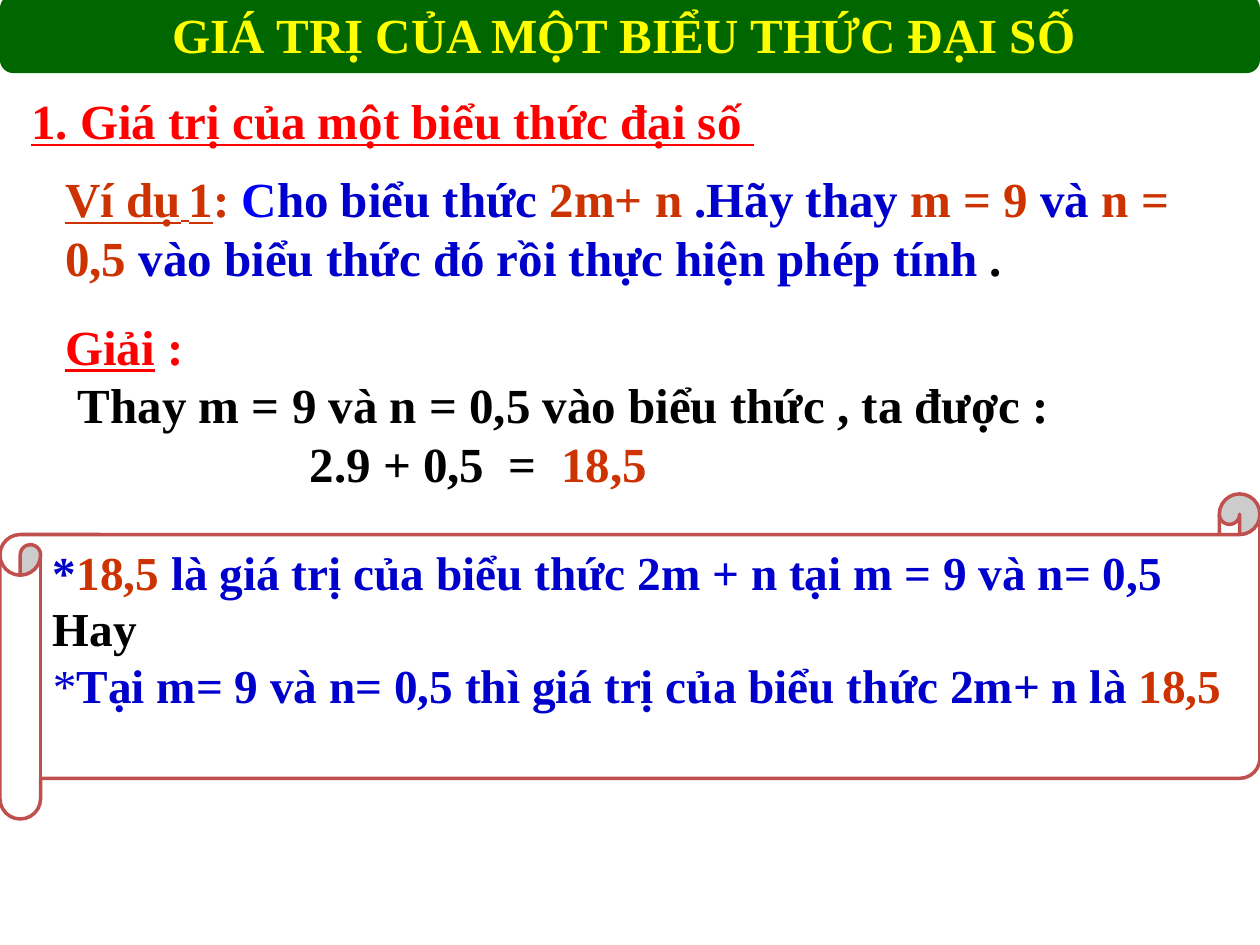
import dataclasses

import pptx
import pptx.dml.color
import pptx.enum.shapes
import pptx.enum.text
import pptx.util

WIDTH, HEIGHT = 10, 7.5
MIDDLE = pptx.enum.text.MSO_ANCHOR.MIDDLE
TOP = pptx.enum.text.MSO_ANCHOR.TOP
CENTER = pptx.enum.text.PP_ALIGN.CENTER
SHAPES = pptx.enum.shapes.MSO_SHAPE


@dataclasses.dataclass(frozen=True)
class Theme:
    font: str = "Times New Roman"
    body_size: int = 28
    note_size: int = 27
    small_size: int = 18
    banner: str = "006600"
    yellow: str = "FFFF00"
    red: str = "FF0000"
    value: str = "CC3300"
    blue: str = "0000CC"
    bright_blue: str = "0000FF"
    black: str = "000000"
    paper: str = "FFFFFF"
    scroll_line: str = "C0504D"


THEME = Theme()


def color(code):
    return pptx.dml.color.RGBColor.from_string(code)


def place(left, top, width, height):
    """Turn shares of the slide's size into lengths."""
    return [pptx.util.Inches(round(share * side, 2)) for share, side in
            zip((left, top, width, height), (WIDTH, HEIGHT) * 2)]


def add_run(paragraph, text, ink, size=THEME.body_size, bold=True, underline=False):
    run = paragraph.add_run()
    run.text = text
    run.font.name = THEME.font
    run.font.size = pptx.util.Pt(size)
    run.font.bold = bold
    run.font.underline = underline
    run.font.color.rgb = color(ink)


def write(shape, lines, size=THEME.body_size, align=None, anchor=TOP, wrap=True, indents=()):
    """Fill a shape; each line is a list of (text, colour, extra format)."""
    frame = shape.text_frame
    frame.word_wrap = wrap
    frame.vertical_anchor = anchor
    for index, line in enumerate(lines):
        paragraph = frame.add_paragraph() if index else frame.paragraphs[0]
        paragraph.alignment = align or pptx.enum.text.PP_ALIGN.LEFT
        if index < len(indents):
            properties = paragraph._p.get_or_add_pPr()
            properties.set("marL", str(pptx.util.Inches(indents[index])))
        for text, ink, *extra in line:
            add_run(paragraph, text, ink, **{"size": size, **(extra[0] if extra else {})})


def add_text(slide, box, lines, **layout):
    write(slide.shapes.add_textbox(*place(*box)), lines, **layout)


def add_panel(slide, kind, box, adjustment, fill, line=None):
    shape = slide.shapes.add_shape(kind, *place(*box))
    shape.shadow.inherit = False
    shape.adjustments[0] = adjustment
    shape.fill.solid()
    shape.fill.fore_color.rgb = color(fill)
    if line:
        shape.line.color.rgb = color(line)
        shape.line.width = pptx.util.Pt(2)
    else:
        shape.line.fill.background()
    return shape


def main():
    presentation = pptx.Presentation()
    presentation.slide_width = pptx.util.Inches(WIDTH)
    presentation.slide_height = pptx.util.Inches(HEIGHT)
    slide = presentation.slides.add_slide(presentation.slide_layouts[6])
    underlined = {"underline": True}
    value, blue, black = THEME.value, THEME.blue, THEME.black

    # Section heading
    add_text(slide, (0.015, 0.09, 0.858, 0.09),
             [[("1. Giá trị của một biểu thức đại số ", THEME.red, underlined)]])

    # Title banner
    banner = add_panel(slide, SHAPES.ROUNDED_RECTANGLE, (0, -0.005, 1, 0.083),
                       0.17, THEME.banner)
    write(banner, [[("GIÁ TRỊ CỦA MỘT BIỂU THỨC ĐẠI SỐ ", THEME.yellow)]],
          align=CENTER, anchor=MIDDLE)

    # Solution
    add_text(slide, (0.042, 0.328, 0.867, 0.201), [
        [("Giải", THEME.red, underlined), (" :", THEME.red)],
        [("Thay m = 9 và n = 0,5 vào biểu thức , ta được :", black)],
        [("2.9 + 0,5  =  ", black), ("18,5", value)],
    ], indents=(0, 0.1, 1.94))

    # Example
    add_text(slide, (0.042, 0.172, 0.95, 0.139), [[
        ("Ví dụ", value, underlined),
        (" ", value, {"underline": True, "size": THEME.small_size}),
        ("1", value, underlined), (": ", value),
        ("C", THEME.bright_blue), ("ho biểu thức ", blue), ("2m+ n", value),
        (" .Hãy thay ", blue), ("m = 9", value), (" và ", blue), ("n = 0,5", value),
        (" vào biểu thức đó rồi thực hiện phép tính", blue), (" .", black),
    ]])

    # Conclusion scroll, with one line's room left below the text
    scroll = add_panel(slide, SHAPES.HORIZONTAL_SCROLL, (0, 0.523, 1, 0.344),
                       0.125, THEME.paper, THEME.scroll_line)
    scroll.text_frame.margin_bottom = pptx.util.Inches(0.5)
    write(scroll, [
        [("*", blue), ("18,5", value),
         (" là giá trị của biểu thức 2m + n tại m = 9 và n= 0,5", blue)],
        [("Hay", black)],
        [("*", blue, {"bold": False}),
         ("Tại m= 9 và n= 0,5 thì giá trị của biểu thức 2m+ n là ", blue),
         ("18,5", value)],
    ], size=THEME.note_size, anchor=MIDDLE, wrap=False)

    presentation.save("out.pptx")


if __name__ == "__main__":
    main()
